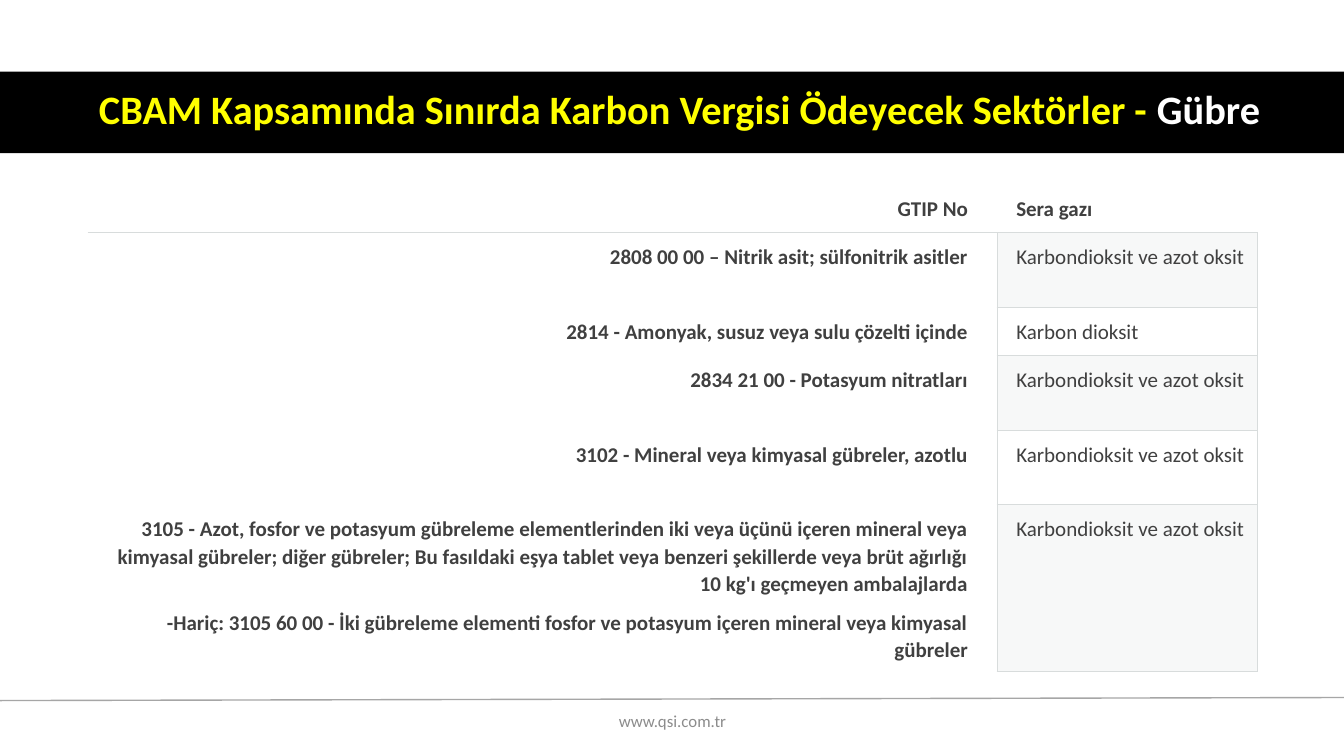
from lxml.etree import SubElement
from pptx import Presentation
from pptx.dml.color import RGBColor
from pptx.enum.shapes import MSO_CONNECTOR, MSO_SHAPE
from pptx.enum.text import MSO_ANCHOR, MSO_AUTO_SIZE, PP_ALIGN
from pptx.oxml.ns import qn
from pptx.util import Inches, Pt

BLACK, WHITE, YELLOW = "000000", "FFFFFF", "FFFF00"
TEXT, FOOTER, RULE = "404040", "8C8C8C", "A6A6A6"
BORDER, SHADE = "D8DCDC", "D8DEDC"

BOTH_GASES = "Karbondioksit ve azot oksit"
HEADER = (["GTIP No"], "Sera gazı")
PRODUCTS = [
    (["2808 00 00 – Nitrik asit; sülfonitrik asitler"], BOTH_GASES),
    (["2814 - Amonyak, susuz veya sulu çözelti içinde"], "Karbon dioksit"),
    (["2834 21 00 - Potasyum nitratları"], BOTH_GASES),
    (["3102 - Mineral veya kimyasal gübreler, azotlu"], BOTH_GASES),
    (["3105 - Azot, fosfor ve potasyum gübreleme elementlerinden iki veya üçünü içeren "
      "mineral veya kimyasal gübreler; diğer gübreler; Bu fasıldaki eşya tablet veya "
      "benzeri şekillerde veya brüt ağırlığı 10 kg'ı geçmeyen ambalajlarda",
      "-Hariç: 3105 60 00 - İki gübreleme elementi fosfor ve potasyum içeren mineral "
      "veya kimyasal gübreler"], BOTH_GASES),
]
ROW_HEIGHTS = [0.48, 0.74, 0.48, 0.74, 0.74, 1.63]
COLUMN_WIDTHS = [9.02, 2.58]


def rgb(code):
    return RGBColor.from_string(code)


def inches(*lengths):
    return [Inches(length) for length in lengths]


class SlideBuilder:
    font = "Calibri"

    def __init__(self, slide):
        self.slide = slide
        self.shapes = slide.shapes

    def style(self, run, size, color, bold=False):
        run.font.name = self.font
        run.font.size = Pt(size)
        run.font.bold = bold
        run.font.color.rgb = rgb(color)

    def rule(self, start, end, color):
        rule = self.shapes.add_connector(MSO_CONNECTOR.STRAIGHT, *inches(*start, *end))
        rule.line.color.rgb = rgb(color)
        rule.line.width = Pt(1)
        SubElement(rule._element.spPr, qn("a:effectLst"))

    def band(self, box, color):
        band = self.shapes.add_shape(MSO_SHAPE.RECTANGLE, *inches(*box))
        band.shadow.inherit = False
        band.fill.solid()
        band.fill.fore_color.rgb = rgb(color)
        band.line.fill.background()

    def title(self, box, parts):
        title = self.shapes.title
        title.left, title.top, title.width, title.height = inches(*box)
        self.shapes._spTree.append(title._element)  # above the band
        frame = title.text_frame
        frame.word_wrap = True
        frame.auto_size = MSO_AUTO_SIZE.NONE
        frame.vertical_anchor = MSO_ANCHOR.MIDDLE
        heading = frame.paragraphs[0]
        heading.alignment = PP_ALIGN.CENTER
        heading.line_spacing = 0.9
        for wording, color in parts:
            run = heading.add_run()
            run.text = wording
            self.style(run, 28.8, color, bold=True)

    def footer(self, box, wording):
        frame = self.shapes.add_textbox(*inches(*box)).text_frame
        frame.word_wrap = True
        frame.vertical_anchor = MSO_ANCHOR.MIDDLE
        address = frame.paragraphs[0]
        address.text = wording
        address.alignment = PP_ALIGN.CENTER
        address.space_after = Pt(6)
        self.style(address.runs[0], 12, FOOTER)

    def fill_cell(self, cell, paragraphs, align, right_inset, bold):
        cell.margin_left, cell.margin_right = inches(0.19, right_inset)
        cell.margin_top = cell.margin_bottom = Inches(0.1)
        cell.text_frame.text = "\n".join(paragraphs)
        for index, paragraph in enumerate(cell.text_frame.paragraphs):
            paragraph.alignment = align
            paragraph.line_spacing = 1.07
            paragraph.space_after = Pt(8)
            if index:
                paragraph._p.get_or_add_pPr().set("marL", str(Inches(0.33)))
            self.style(paragraph.runs[0], 15, TEXT, bold)

    def borders(self, cell, sides):
        """Draw the given sides of a cell (L, R, T, B) and hide the others."""
        properties = cell._tc.get_or_add_tcPr()
        for side in "LRTB":
            line = SubElement(properties, qn(f"a:ln{side}"), w=str(Pt(0.75)))
            if side in sides:
                paint = SubElement(line, qn("a:solidFill"))
                SubElement(paint, qn("a:srgbClr"), val=BORDER)
            else:
                SubElement(line, qn("a:noFill"))

    def shade(self, cell, color, percent):
        cell.fill.solid()
        cell.fill.fore_color.rgb = rgb(color)
        tint = cell._tc.tcPr.find(qn("a:solidFill")).find(qn("a:srgbClr"))
        SubElement(tint, qn("a:alpha"), val=str(percent * 1000))

    def table(self, left, top, rows):
        size = (sum(COLUMN_WIDTHS), sum(ROW_HEIGHTS))
        table = self.shapes.add_table(len(rows), 2, *inches(left, top, *size)).table
        table.first_row = table.horz_banding = False
        for column, width in zip(table.columns, COLUMN_WIDTHS):
            column.width = Inches(width)
        for index, (codes, gas) in enumerate(rows):
            table.rows[index].height = Inches(ROW_HEIGHTS[index])
            is_header = index == 0
            code_cell, gas_cell = table.cell(index, 0), table.cell(index, 1)
            self.fill_cell(code_cell, codes, PP_ALIGN.RIGHT, 0.29, True)
            self.fill_cell(gas_cell, [gas], PP_ALIGN.JUSTIFY, 0.07, is_header)
            self.borders(code_cell, "B" if is_header else "RT" if index == 1 else "R")
            self.borders(gas_cell, "B" if is_header else "LRTB")
            code_cell.fill.background()
            if index % 2:
                self.shade(gas_cell, SHADE, 20)
            else:
                gas_cell.fill.background()


def main():
    deck = Presentation()
    deck.slide_width, deck.slide_height = inches(13.33, 7.5)
    title_only = deck.slide_layouts[5]
    builder = SlideBuilder(deck.slides.add_slide(title_only))
    builder.rule((0, 6.95), (13.33, 6.92), RULE)
    builder.band((0, 0.71, 13.33, 0.81), BLACK)
    builder.title((0.61, 0.7, 12.26, 0.81), [
        ("CBAM Kapsamında Sınırda Karbon Vergisi Ödeyecek Sektörler - ", YELLOW),
        ("Gübre", WHITE),
    ])
    builder.footer((4.42, 6.95, 4.5, 0.4), "www.qsi.com.tr")
    builder.table(0.87, 1.83, [HEADER, *PRODUCTS])
    deck.save("out.pptx")


if __name__ == "__main__":
    main()
